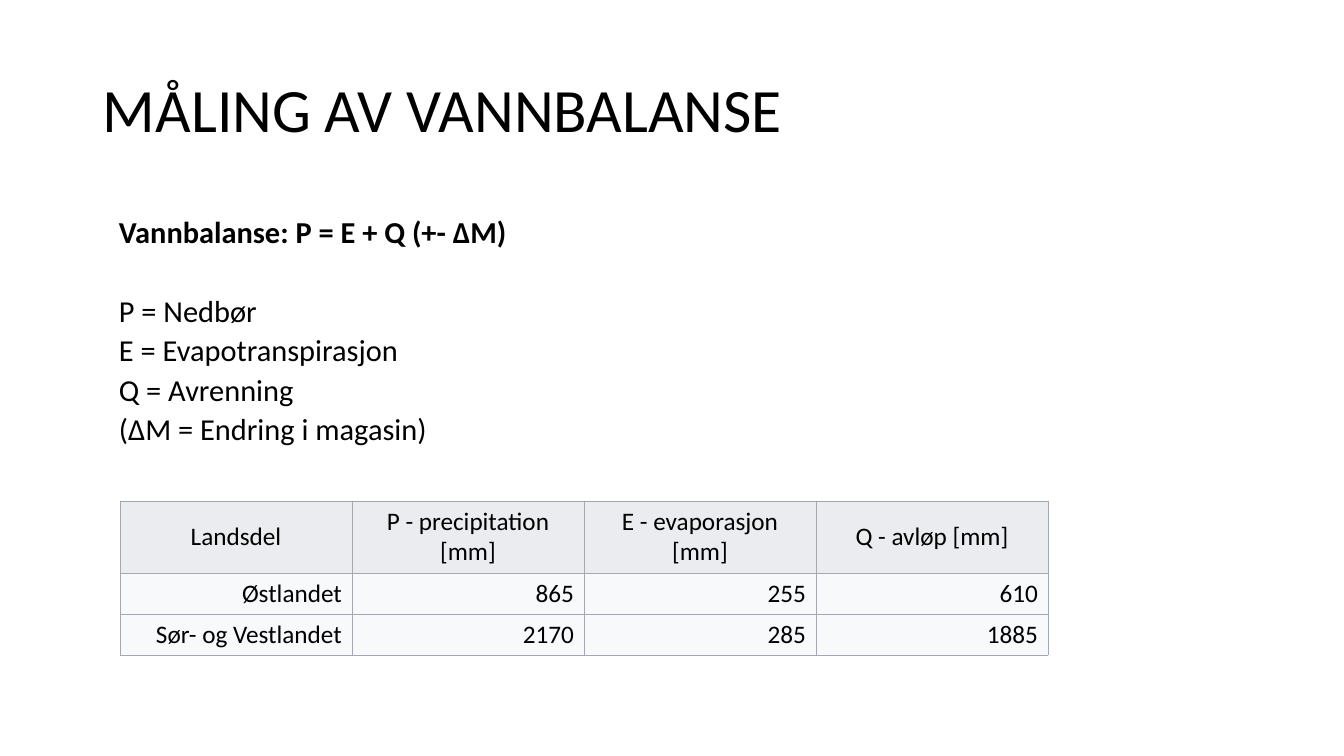
from lxml import etree
from pptx import Presentation
from pptx import util as u
from pptx.dml.color import RGBColor
from pptx.enum import text as t
from pptx.oxml.ns import qn

TITLE = "MÅLING AV VANNBALANSE"
EQUATION = "Vannbalanse: P = E + Q (+- ΔM)"
SYMBOLS = ["P = Nedbør", "E = Evapotranspirasjon", "Q = Avrenning",
           "(ΔM = Endring i magasin)"]
TABLE = [
    ("Landsdel", "P - precipitation [mm]", "E - evaporasjon [mm]", "Q - avløp [mm]"),
    ("Østlandet", "865", "255", "610"),
    ("Sør- og Vestlandet", "2170", "285", "1885"),
]
COLORS = {"text": "000000", "border": "A2A9B1", "header": "EAECF0", "body": "F8F9FA"}
FONT = "Calibri"
TITLE_AT = (93, 40, 1159, 146)
BODY_AT = (109, 218, 1192, 242)
TABLE_AT = (120, 501)
COLUMN_WIDTH = 232
ROW_HEIGHTS = [72, 41, 41]


def px(length):
    return u.Emu(round(length * 914400 / 100.8))


def write(para, words, *, size, bold=False, align=t.PP_ALIGN.LEFT, spacing=1.0, before=0):
    para.alignment = align
    para.line_spacing = spacing
    para.space_before = u.Pt(before)
    span = para.add_run()
    span.text = words
    span.font.name = FONT
    span.font.size = u.Pt(size)
    span.font.bold = bold
    span.font.color.rgb = RGBColor.from_string(COLORS["text"])


def add_frame(page, at, anchor):
    frame = page.shapes.add_textbox(*map(px, at)).text_frame
    frame.word_wrap = True
    frame.vertical_anchor = anchor
    return frame


def outline(cell):
    """Draw a thin line on all four sides; call before filling the cell."""
    properties = cell._tc.get_or_add_tcPr()
    for side in ("lnL", "lnR", "lnT", "lnB"):
        line = etree.SubElement(properties, qn(f"a:{side}"), w=str(u.Pt(0.75)))
        fill = etree.SubElement(line, qn("a:solidFill"))
        etree.SubElement(fill, qn("a:srgbClr"), val=COLORS["border"])


def add_balance_table(page):
    columns = len(TABLE[0])
    table = page.shapes.add_table(
        len(TABLE), columns, *map(px, TABLE_AT),
        px(COLUMN_WIDTH * columns), px(sum(ROW_HEIGHTS))).table
    table.first_row = table.horz_banding = False
    for column in table.columns:
        column.width = px(COLUMN_WIDTH)
    for r, (values, height) in enumerate(zip(TABLE, ROW_HEIGHTS)):
        table.rows[r].height = px(height)
        kind, align = (("body", t.PP_ALIGN.RIGHT) if r
                       else ("header", t.PP_ALIGN.CENTER))
        for c, value in enumerate(values):
            cell = table.cell(r, c)
            outline(cell)
            cell.fill.solid()
            cell.fill.fore_color.rgb = RGBColor.from_string(COLORS[kind])
            cell.vertical_anchor = t.MSO_ANCHOR.MIDDLE
            write(cell.text_frame.paragraphs[0], value, size=18, align=align)


def main():
    deck = Presentation()
    deck.slide_width, deck.slide_height = px(1344), px(756)
    page = deck.slides.add_slide(deck.slide_layouts[6])

    title = add_frame(page, TITLE_AT, t.MSO_ANCHOR.MIDDLE)
    write(title.paragraphs[0], TITLE, size=44, spacing=0.9)

    add_balance_table(page)

    body = add_frame(page, BODY_AT, t.MSO_ANCHOR.TOP)
    write(body.paragraphs[0], EQUATION, size=21.7, bold=True, spacing=0.7)
    for i, symbol in enumerate(SYMBOLS):
        write(body.add_paragraph(), symbol, size=21.7, spacing=0.7,
              before=10 if i else 38)

    deck.save("out.pptx")


if __name__ == "__main__":
    main()
